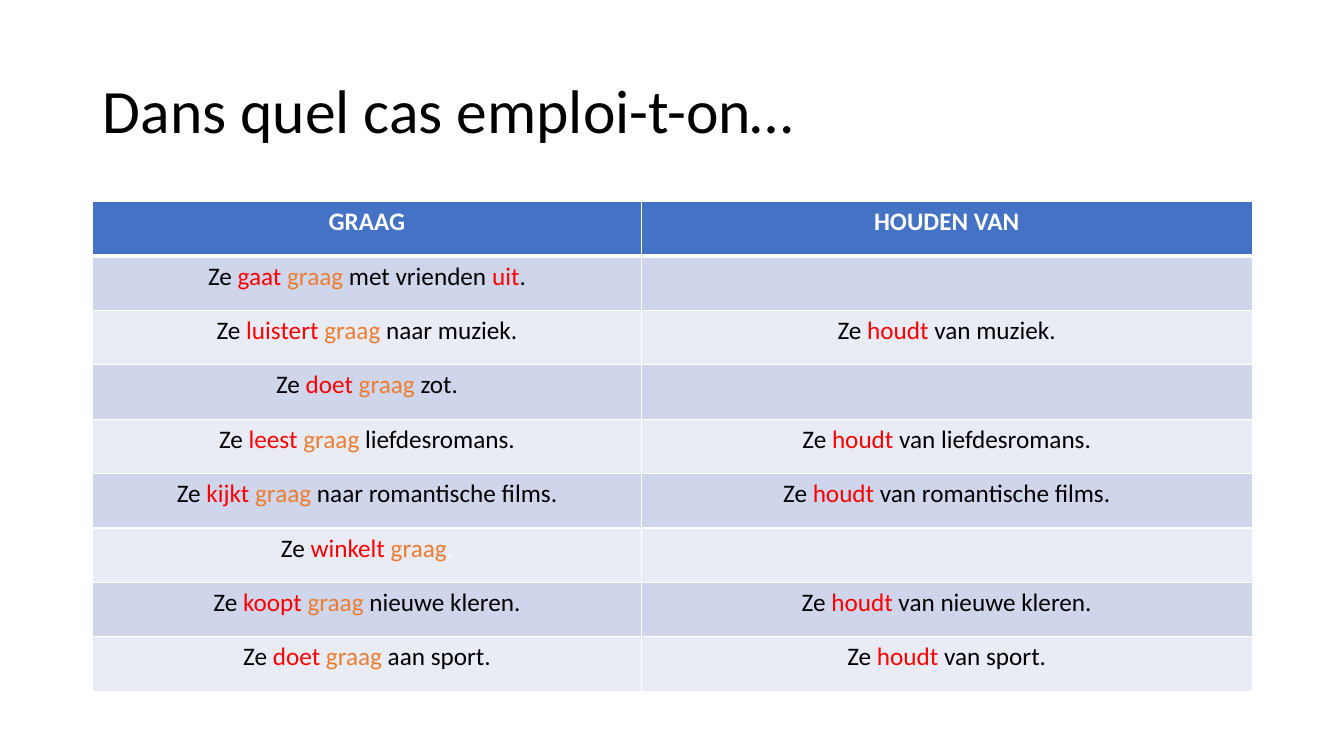
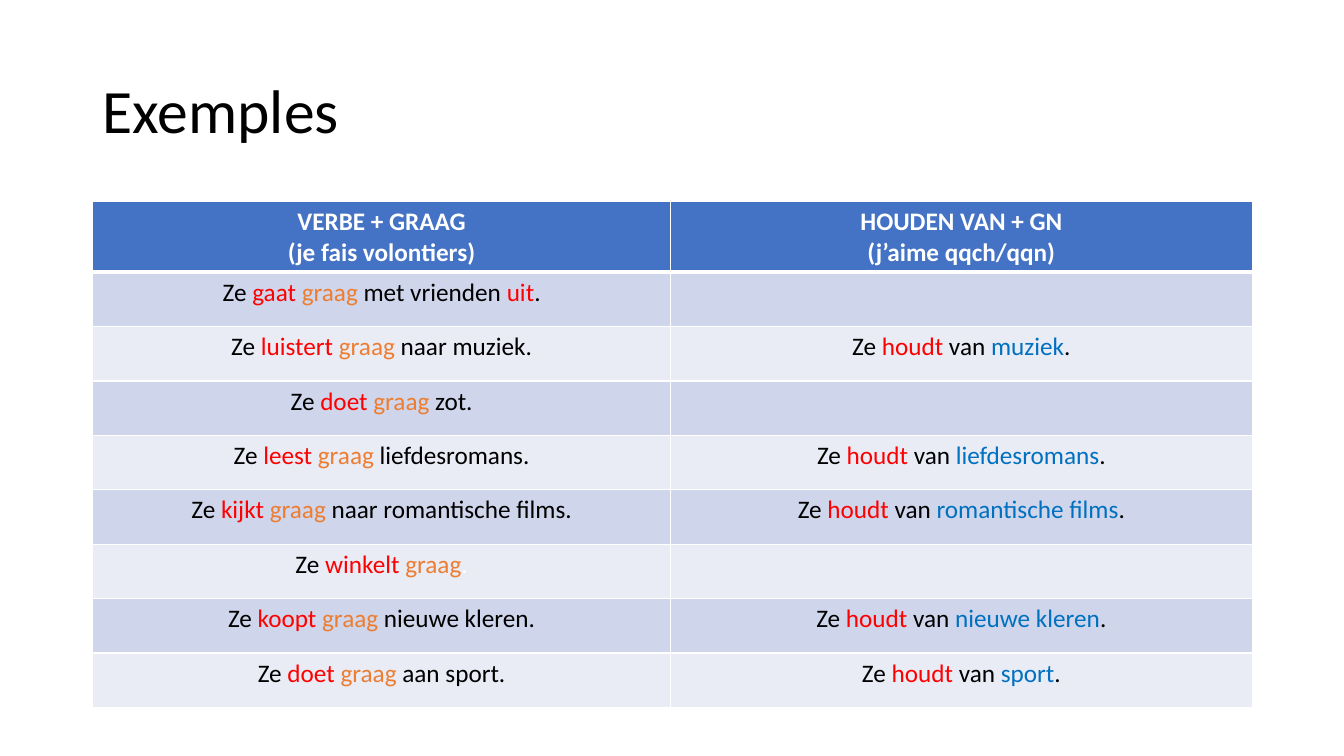
from pptx import Presentation
from pptx.dml.color import RGBColor
from pptx.enum.text import MSO_ANCHOR, PP_ALIGN
from pptx.oxml.ns import qn
from pptx.util import Pt
from lxml import etree

# Scale: 100 px to the inch
PX = 9144
SLIDE_WIDTH, SLIDE_HEIGHT = 1333, 750

# Shared style
FONT = "Calibri"
TITLE_SIZE, TABLE_SIZE = 44, 18
BLACK = RGBColor(0x00, 0x00, 0x00)
WHITE = RGBColor(0xFF, 0xFF, 0xFF)
RED = RGBColor(0xFF, 0x00, 0x00)
ORANGE = RGBColor(0xED, 0x7D, 0x31)
BLUE = RGBColor(0x00, 0x70, 0xC0)
HEADER_FILL = RGBColor(0x44, 0x72, 0xC4)
BAND_FILLS = (RGBColor(0xE9, 0xEB, 0xF5), RGBColor(0xCF, 0xD5, 0xEA))
MIDDLE, CENTER = MSO_ANCHOR.MIDDLE, PP_ALIGN.CENTER

# Shared layout
LEFT, WIDTH = 92, 1150
TITLE_TOP, TITLE_HEIGHT = 40, 145
TABLE_TOP, ROW_HEIGHT = 200, 54
THIN, THICK = 1, 3

# Verb, runs that follow "graag", and what is liked (if anything)
EXAMPLES = [
    ("gaat", [(" met vrienden ", BLACK), ("uit", RED), (".", BLACK)], None),
    ("luistert", [(" naar muziek.", BLACK)], "muziek"),
    ("doet", [(" zot.", BLACK)], None),
    ("leest", [(" liefdesromans.", BLACK)], "liefdesromans"),
    ("kijkt", [(" naar romantische films.", BLACK)], "romantische films"),
    ("winkelt", [(".", WHITE)], None),
    ("koopt", [(" nieuwe kleren.", BLACK)], "nieuwe kleren"),
    ("doet", [(" aan sport.", BLACK)], "sport"),
]


def px(length):
    return length * PX


def style_run(run, size, color, bold=False):
    run.font.name = FONT
    run.font.size = Pt(size)
    run.font.color.rgb = color
    run.font.bold = bold


def add_title(slide, text):
    box = slide.shapes.add_textbox(px(LEFT), px(TITLE_TOP), px(WIDTH), px(TITLE_HEIGHT))
    text_frame = box.text_frame
    text_frame.word_wrap = True
    text_frame.vertical_anchor = MIDDLE
    text_frame.text = text
    paragraph = text_frame.paragraphs[0]
    paragraph.line_spacing = 0.9
    style_run(paragraph.runs[0], TITLE_SIZE, BLACK)


def set_borders(cell, top, bottom):
    properties = cell._tc.get_or_add_tcPr()
    for side, width in (("lnL", THIN), ("lnR", THIN), ("lnT", top), ("lnB", bottom)):
        line = etree.SubElement(properties, qn(f"a:{side}"), w=str(Pt(width)))
        fill = etree.SubElement(line, qn("a:solidFill"))
        etree.SubElement(fill, qn("a:srgbClr"), val=str(WHITE))


def style_cell(cell, row):
    """Draw borders and fill; the rule below the header is thick."""
    set_borders(cell, THICK if row == 1 else THIN, THICK if row == 0 else THIN)
    cell.fill.solid()
    cell.fill.fore_color.rgb = BAND_FILLS[row % 2] if row else HEADER_FILL


def write_header(cell, text):
    cell.text_frame.text = text
    for paragraph in cell.text_frame.paragraphs:
        paragraph.alignment = CENTER
        style_run(paragraph.runs[0], TABLE_SIZE, WHITE, bold=True)


def write_sentence(cell, parts):
    paragraph = cell.text_frame.paragraphs[0]
    paragraph.alignment = CENTER
    for text, color in parts:
        run = paragraph.add_run()
        run.text = text
        style_run(run, TABLE_SIZE, color)


def graag_sentence(verb, ending):
    return [("Ze ", BLACK), (f"{verb} ", RED), ("graag", ORANGE), *ending]


def houden_sentence(liked, liked_color):
    return [("Ze ", BLACK), ("houdt", RED), (" van ", BLACK),
            (liked, liked_color), (".", BLACK)]


def add_examples_table(slide, headers, header_height, first_width, liked_color):
    row_heights = [header_height] + [ROW_HEIGHT] * len(EXAMPLES)
    frame = slide.shapes.add_table(len(row_heights), len(headers), px(LEFT),
                                   px(TABLE_TOP), px(WIDTH), px(sum(row_heights)))
    table = frame.table
    table.first_row = table.horz_banding = False
    for column, width in zip(table.columns, (first_width, WIDTH - first_width)):
        column.width = px(width)
    for row, height in enumerate(row_heights):
        table.rows[row].height = px(height)
        for column in range(len(headers)):
            style_cell(table.cell(row, column), row)

    for column, header in enumerate(headers):
        write_header(table.cell(0, column), header)
    for row, (verb, ending, liked) in enumerate(EXAMPLES, start=1):
        write_sentence(table.cell(row, 0), graag_sentence(verb, ending))
        if liked:
            write_sentence(table.cell(row, 1), houden_sentence(liked, liked_color))


def main():
    presentation = Presentation()
    presentation.slide_width = px(SLIDE_WIDTH)
    presentation.slide_height = px(SLIDE_HEIGHT)
    blank = presentation.slide_layouts[6]

    # Question
    slide = presentation.slides.add_slide(blank)
    add_title(slide, "Dans quel cas emploi-t-on…")
    add_examples_table(slide, ("GRAAG", "HOUDEN VAN"), ROW_HEIGHT, 544, BLACK)

    # Answer, with what is liked picked out
    slide = presentation.slides.add_slide(blank)
    add_title(slide, "Exemples")
    headers = ("VERBE + GRAAG\n(je fais volontiers)", "HOUDEN VAN + GN\n(j’aime qqch/qqn)")
    add_examples_table(slide, headers, 70, 573, BLUE)

    presentation.save("out.pptx")


if __name__ == "__main__":
    main()
